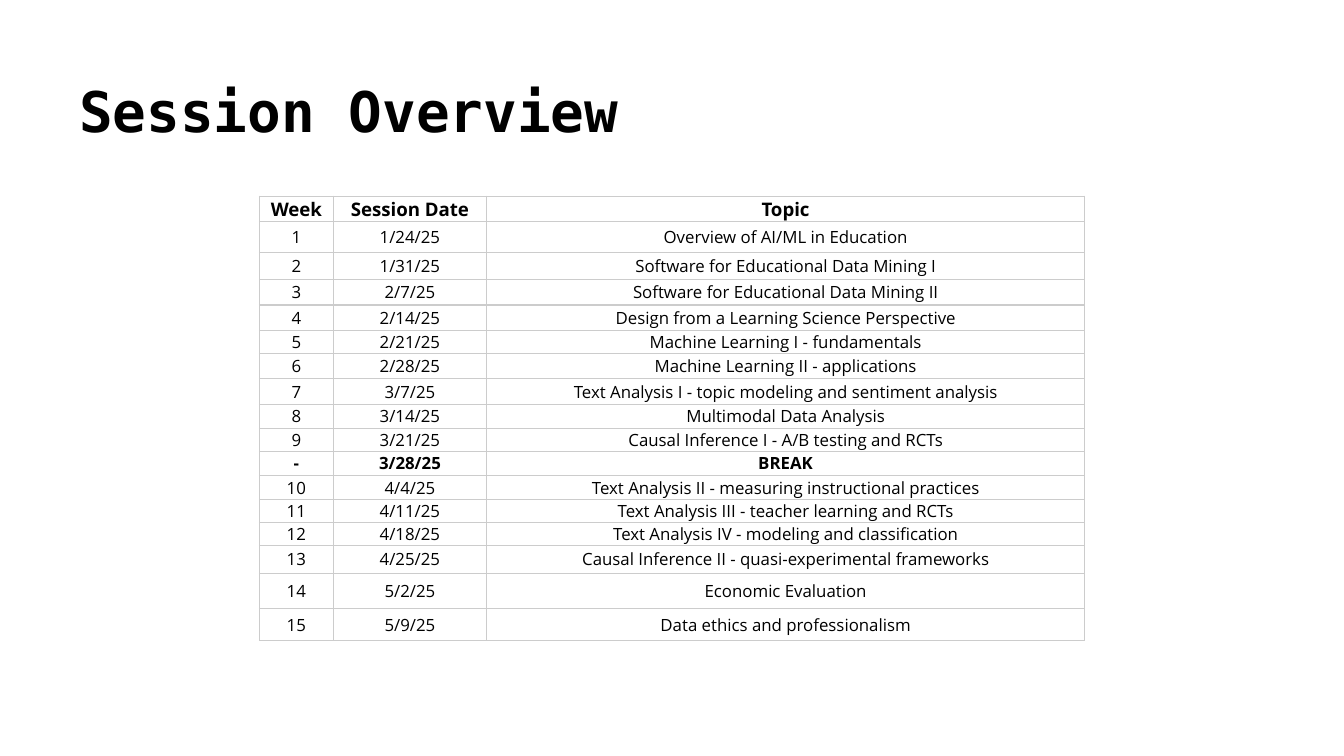
import pptx
import pptx.dml.color
import pptx.enum.text
import pptx.oxml
import pptx.oxml.ns
import pptx.util
from pptx.util import Inches

TITLE_FONT = "DejaVu Sans Mono"
TABLE_FONT = "Open Sans"
BLACK = "000000"
GRID_GREY = "CCCCCC"

COLUMN_WIDTHS = [0.55, 1.14, 4.45]
HEADINGS = (0.19, "Week", "Session Date", "Topic")
SESSIONS = [
    (0.23, "1", "1/24/25", "Overview of AI/ML in Education"),
    (0.20, "2", "1/31/25", "Software for Educational Data Mining I"),
    (0.19, "3", "2/7/25", "Software for Educational Data Mining II"),
    (0.19, "4", "2/14/25", "Design from a Learning Science Perspective"),
    (0.17, "5", "2/21/25", "Machine Learning I - fundamentals"),
    (0.19, "6", "2/28/25", "Machine Learning II - applications"),
    (0.19, "7", "3/7/25", "Text Analysis I - topic modeling and sentiment analysis"),
    (0.18, "8", "3/14/25", "Multimodal Data Analysis"),
    (0.17, "9", "3/21/25", "Causal Inference I - A/B testing and RCTs"),
    (0.18, "-", "3/28/25", "BREAK"),
    (0.18, "10", "4/4/25", "Text Analysis II - measuring instructional practices"),
    (0.17, "11", "4/11/25", "Text Analysis III - teacher learning and RCTs"),
    (0.17, "12", "4/18/25", "Text Analysis IV - modeling and classification"),
    (0.21, "13", "4/25/25", "Causal Inference II - quasi-experimental frameworks"),
    (0.26, "14", "5/2/25", "Economic Evaluation"),
    (0.24, "15", "5/9/25", "Data ethics and professionalism"),
]
PADDED_WEEKS = {"13", "14", "15"}


def rgb(hex_colour):
    return pptx.dml.color.RGBColor.from_string(hex_colour)


def write_text(frame, text, *, size, font, colour=BLACK, bold=False, align="LEFT"):
    paragraph = frame.paragraphs[0]
    paragraph.alignment = getattr(pptx.enum.text.PP_ALIGN, align)
    run = paragraph.add_run()
    run.text = text
    run.font.size = pptx.util.Pt(size)
    run.font.name = font
    run.font.bold = bold
    run.font.color.rgb = rgb(colour)


def set_borders(cell, colour, width):
    properties = cell._tc.get_or_add_tcPr()
    for position, side in enumerate(("lnL", "lnR", "lnT", "lnB")):
        line = pptx.oxml.parse_xml(
            f'<a:{side} {pptx.oxml.ns.nsdecls("a")} w="{pptx.util.Pt(width)}">'
            f'<a:solidFill><a:srgbClr val="{colour}"/></a:solidFill></a:{side}>'
        )
        properties.insert(position, line)


def add_title(slide, text):
    title = slide.shapes.add_textbox(Inches(0.49), Inches(0.03), Inches(8.96), Inches(1.09))
    frame = title.text_frame
    frame.word_wrap = True
    frame.vertical_anchor = pptx.enum.text.MSO_ANCHOR.BOTTOM
    write_text(frame, text, size=30, font=TITLE_FONT, bold=True)


def format_cell(cell, text, *, size, bold, padded):
    cell.fill.background()
    cell.vertical_anchor = pptx.enum.text.MSO_ANCHOR.MIDDLE
    cell.margin_left = cell.margin_right = Inches(0.03 if padded else 0)
    cell.margin_top = cell.margin_bottom = Inches(0.02 if padded else 0)
    write_text(cell.text_frame, text, size=size, font=TABLE_FONT, bold=bold, align="CENTER")
    set_borders(cell, GRID_GREY, 0.75)


def add_schedule(slide):
    rows = [HEADINGS] + SESSIONS
    schedule = slide.shapes.add_table(
        len(rows), len(COLUMN_WIDTHS), Inches(1.93), Inches(1.46),
        Inches(sum(COLUMN_WIDTHS)), Inches(sum(row[0] for row in rows)),
    ).table
    schedule.horz_banding = False
    for column, width in zip(schedule.columns, COLUMN_WIDTHS):
        column.width = Inches(width)
    for table_row, (height, *texts) in zip(schedule.rows, rows):
        table_row.height = Inches(height)
        week = texts[0]
        for cell, text in zip(table_row.cells, texts):
            format_cell(
                cell, text,
                size=10 if week == "Week" else 9,
                bold=week in ("Week", "-"),
                padded=week in PADDED_WEEKS,
            )


def main():
    presentation = pptx.Presentation()
    presentation.slide_width = Inches(10)
    presentation.slide_height = Inches(10 * 9 / 16)
    slide = presentation.slides.add_slide(presentation.slide_layouts[6])
    add_title(slide, "Session Overview")
    add_schedule(slide)
    presentation.save("out.pptx")


if __name__ == "__main__":
    main()
